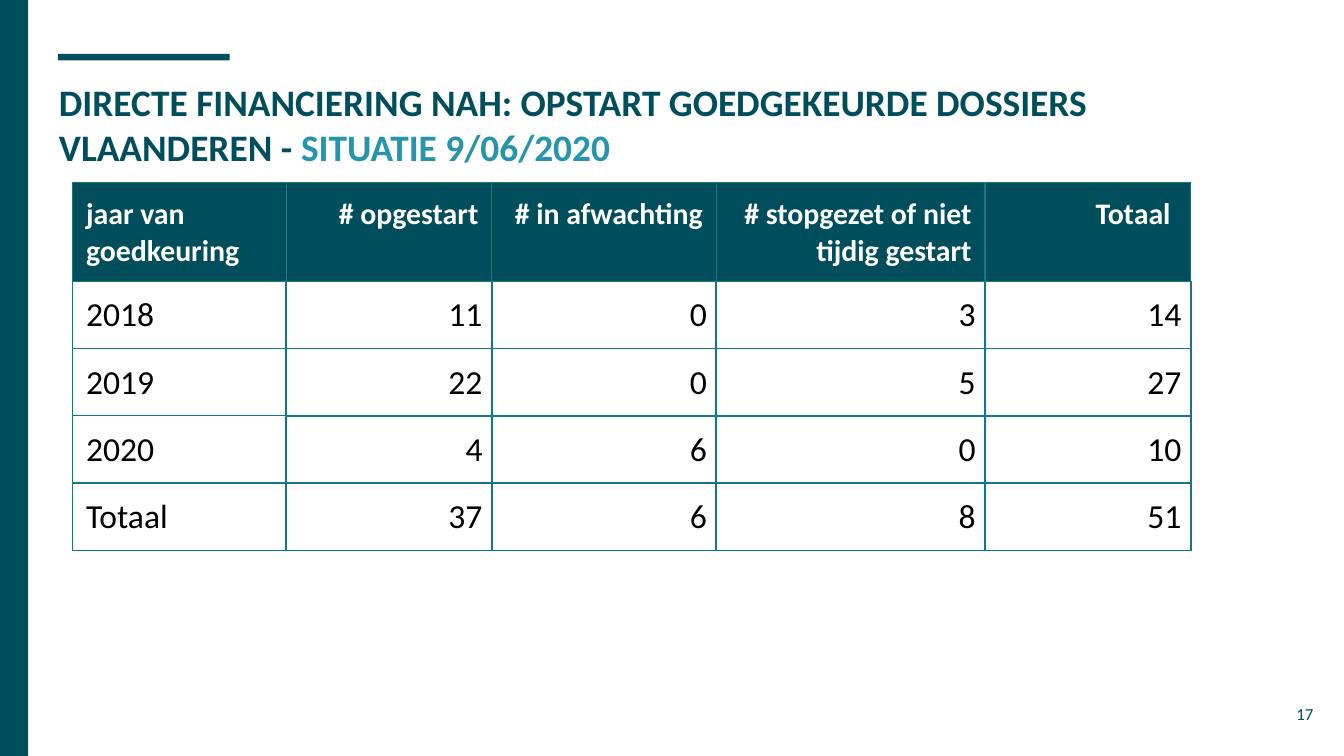
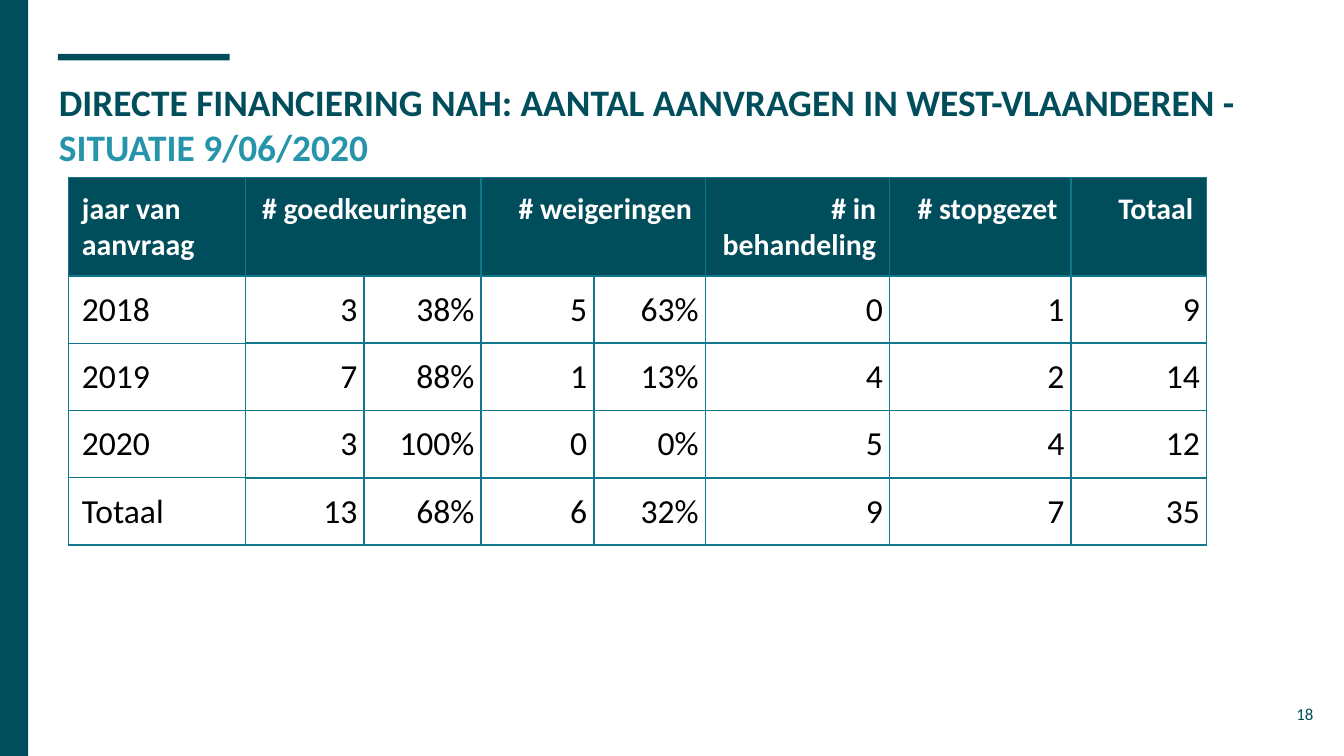
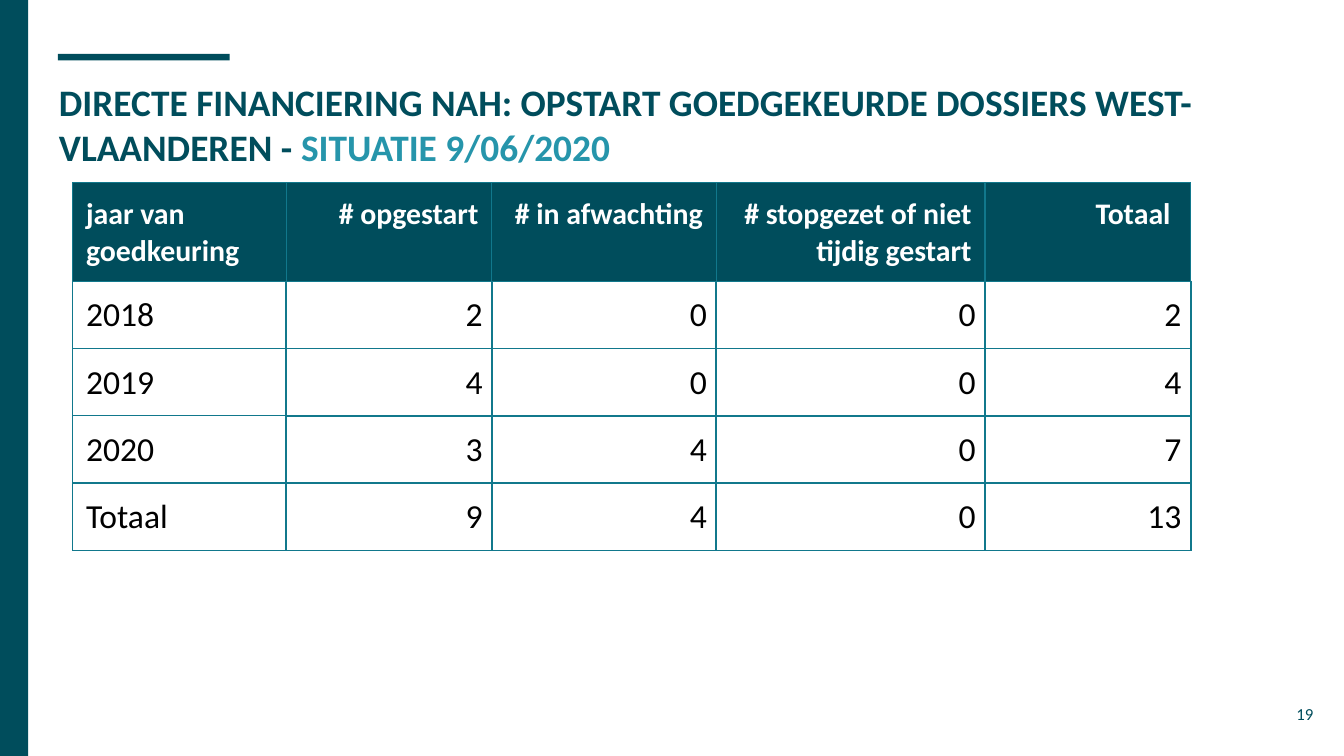
from dataclasses import dataclass
from typing import Optional

import pptx
import pptx.dml.color
import pptx.enum.shapes
import pptx.enum.text
import pptx.oxml
import pptx.oxml.ns
import pptx.util
from pptx.util import Inches

# Shared look
FONT = "Calibri"
DARK, LIGHT, LINE = "004D5C", "2695AB", "11788C"
WHITE, BLACK = "FFFFFF", "000000"
THIN, THICK = 0.75, 1.0
PAD = 0.1
WIDTH = 10
HEIGHT = WIDTH * 9 / 16
ROWS = (0.42, 0.43, 0.5, 0.43, 0.42)  # least heights; text makes rows grow
DATE = "SITUATIE 9/06/2020"
RIGHT = pptx.enum.text.PP_ALIGN.RIGHT
LEFT = pptx.enum.text.PP_ALIGN.LEFT
TOP = pptx.enum.text.MSO_ANCHOR.TOP
MIDDLE = pptx.enum.text.MSO_ANCHOR.MIDDLE


@dataclass(frozen=True)
class Box:
    left: float
    top: float
    width: float
    height: float

    def place(self) -> tuple:
        return tuple(Inches(n) for n in (self.left, self.top, self.width, self.height))


@dataclass(frozen=True)
class Grid:
    """Layout of a table; seam is the line between body and heads."""
    left: float
    top: float
    widths: tuple[float, ...]
    heads: tuple[Optional[str], ...]  # None continues the head before it
    pad: float
    anchor: pptx.enum.text.MSO_ANCHOR
    seam: float
    fine: Optional[int] = None  # column with a thin left line

    def upright(self, row: int, col: int) -> float:
        if row == 0 or col in (0, self.fine):
            return THIN
        return self.seam if col == 1 else THICK

    def level(self, row: int, col: int) -> float:
        if row == 0 or col == 0:
            return THIN
        return self.seam if row == 1 else THICK


@dataclass(frozen=True)
class Page:
    number: int
    title: str
    grid: Grid
    rows: tuple[tuple[str, ...], ...]


BANDS = (Box(0.43, 0.4, 1.28, 0.05), Box(0, 0, 0.21, HEIGHT))
TITLE = Box(0.34, 0.49, 9.32, 0.63)
NUMBER = Box(9.27, 5.1, 0.6, 0.43)

STARTS = Grid(
    0.54, 1.36, (1.59, 1.53, 1.67, 2, 1.53),
    ("jaar van goedkeuring", "# opgestart", "# in afwachting",
     "# stopgezet of niet tijdig gestart", "Totaal "),
    pad=0.07, anchor=TOP, seam=THICK)
CLAIMS = Grid(
    0.51, 1.32, (1.32, 0.88, 0.87, 0.84, 0.83, 1.37, 1.35, 1.01),
    ("jaar van aanvraag", "# goedkeuringen", None, "# weigeringen", None,
     "# in behandeling", "# stopgezet", "Totaal"),
    pad=0.05, anchor=MIDDLE, seam=THIN, fine=7)

PAGES = (
    Page(17, "DIRECTE FINANCIERING NAH: OPSTART GOEDGEKEURDE DOSSIERS VLAANDEREN - ",
         STARTS,
         (("2018", "11", "0", "3", "14"),
          ("2019", "22", "0", "5", "27"),
          ("2020", "4", "6", "0", "10"),
          ("Totaal", "37", "6", "8", "51"))),
    Page(18, "DIRECTE FINANCIERING NAH: AANTAL AANVRAGEN IN WEST-VLAANDEREN - ",
         CLAIMS,
         (("2018", "3", "38%", "5", "63%", "0", "1", "9"),
          ("2019", "7", "88%", "1", "13%", "4", "2", "14"),
          ("2020", "3", "100%", "0", "0%", "5", "4", "12"),
          ("Totaal", "13", "68%", "6", "32%", "9", "7", "35"))),
    Page(19, "DIRECTE FINANCIERING NAH: OPSTART GOEDGEKEURDE DOSSIERS WEST-VLAANDEREN - ",
         STARTS,
         (("2018", "2", "0", "0", "2"),
          ("2019", "4", "0", "0", "4"),
          ("2020", "3", "4", "0", "7"),
          ("Totaal", "9", "4", "0", "13"))),
)


def paint(target, color: str) -> None:
    """Give a fill a solid colour."""
    target.solid()
    target.fore_color.rgb = pptx.dml.color.RGBColor.from_string(color)


def style(run, size: float, color: str, bold: bool = False) -> None:
    run.font.name = FONT
    run.font.size = pptx.util.Pt(size)
    run.font.bold = bold
    paint(run.font.fill, color)


def inset(target, side: float = PAD) -> None:
    target.margin_left = target.margin_right = Inches(side)
    target.margin_top = target.margin_bottom = Inches(PAD)


def add_band(slide, box: Box) -> None:
    band = slide.shapes.add_shape(pptx.enum.shapes.MSO_SHAPE.RECTANGLE, *box.place())
    band.shadow.inherit = False
    paint(band.fill, DARK)
    band.line.fill.background()


def add_frame(slide, box: Box, anchor):
    frame = slide.shapes.add_textbox(*box.place()).text_frame
    frame.word_wrap = True
    frame.vertical_anchor = anchor
    inset(frame)
    return frame


def add_base(slide, page: Page) -> None:
    """Draw bands, title and page number."""
    for box in BANDS:
        add_band(slide, box)
    line = add_frame(slide, TITLE, TOP).paragraphs[0]
    for text, color in ((page.title, DARK), (DATE, LIGHT)):
        run = line.add_run()
        run.text = text
        style(run, 20, color, True)
    frame = add_frame(slide, NUMBER, MIDDLE)
    frame.text = str(page.number)
    frame.paragraphs[0].alignment = RIGHT
    style(frame.paragraphs[0].runs[0], 9, DARK)


def rule_cell(cell, grid: Grid, row: int, col: int) -> None:
    """Draw the four borders of a cell."""
    sides = {"L": grid.upright(row, col), "R": grid.upright(row, col + 1),
             "T": grid.level(row, col), "B": grid.level(row + 1, col)}
    space = pptx.oxml.ns.nsdecls("a")
    for side, width in sides.items():
        cell._tc.get_or_add_tcPr().append(pptx.oxml.parse_xml(
            f'<a:ln{side} {space} w="{pptx.util.Pt(width)}"><a:solidFill>'
            f'<a:srgbClr val="{LINE}"/></a:solidFill></a:ln{side}>'))


def fill_cell(cell, grid: Grid, row: int, col: int, text: Optional[str]) -> None:
    head, label = row == 0, col == 0
    rule_cell(cell, grid, row, col)
    if head:
        paint(cell.fill, DARK)
    else:
        cell.fill.background()
    if text is None:
        return
    plain = head or label
    inset(cell, PAD if plain else grid.pad)
    cell.vertical_anchor = TOP if plain else grid.anchor
    cell.text_frame.text = text
    line = cell.text_frame.paragraphs[0]
    line.alignment = LEFT if label else RIGHT
    style(line.runs[0], 16 if head else 18, WHITE if head else BLACK, head)


def add_grid(slide, page: Page) -> None:
    grid = page.grid
    box = Box(grid.left, grid.top, sum(grid.widths), sum(ROWS))
    table = slide.shapes.add_table(len(ROWS), len(grid.widths), *box.place()).table
    table.horz_banding = False
    for column, width in zip(table.columns, grid.widths):
        column.width = Inches(width)
    for row, (height, texts) in enumerate(zip(ROWS, (grid.heads, *page.rows))):
        table.rows[row].height = Inches(height)
        for col, text in enumerate(texts):
            fill_cell(table.cell(row, col), grid, row, col, text)
    for col, text in enumerate(grid.heads):
        if text is None:
            table.cell(0, col - 1).merge(table.cell(0, col))


def main() -> None:
    deck = pptx.Presentation()
    deck.slide_width, deck.slide_height = Inches(WIDTH), Inches(HEIGHT)
    for page in PAGES:
        slide = deck.slides.add_slide(deck.slide_layouts[6])
        paint(slide.background.fill, WHITE)
        add_base(slide, page)
        add_grid(slide, page)
    deck.save("out.pptx")


if __name__ == "__main__":
    main()
